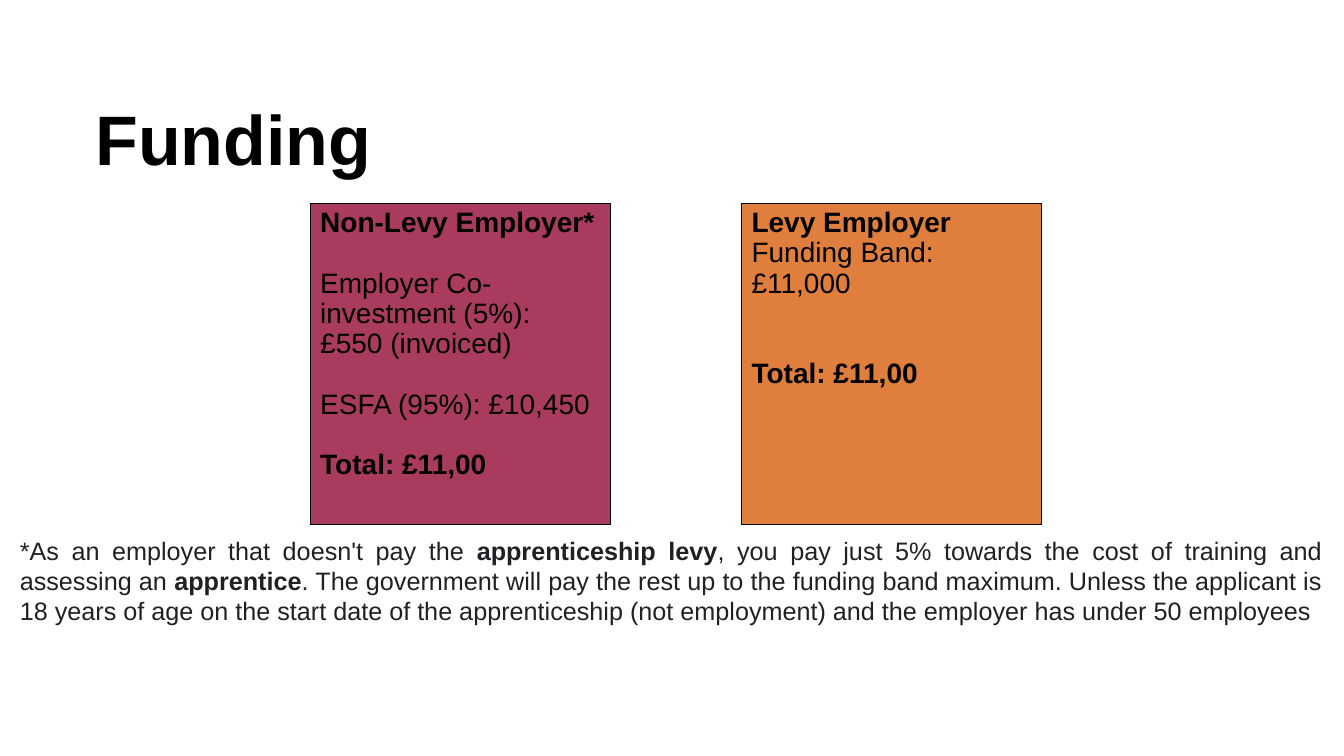
from pptx import Presentation
from pptx.dml.color import RGBColor
from pptx.enum.shapes import MSO_SHAPE as Shape
from pptx.enum.text import MSO_ANCHOR as Anchor, PP_ALIGN as Align
from pptx.util import Cm, Pt

BLACK = RGBColor(0x00, 0x00, 0x00)
CHARCOAL = RGBColor(0x20, 0x21, 0x24)
BERRY = RGBColor(0xA9, 0x3B, 0x5F)
ORANGE = RGBColor(0xE0, 0x7F, 0x3D)

# Content: each paragraph is (lines of space before, [(text, bold), ...])
TITLE = [(0, [("Funding", True)])]
CARDS = [
    (BERRY, [
        (0, [("Non-Levy Employer*", True)]),
        (1, [("Employer Co-investment (5%): £550 (invoiced)", False)]),
        (1, [("ESFA (95%): £10,450", False)]),
        (1, [("Total: £11,00", True)]),
    ]),
    (ORANGE, [
        (0, [("Levy Employer", True)]),
        (0, [("Funding Band: £11,000", False)]),
        (2, [("Total: £11,00", True)]),
    ]),
]
FOOTNOTE = [(0, [
    ("*As an employer that doesn't pay the ", False),
    ("apprenticeship levy", True),
    (", you pay just 5% towards the cost of training and assessing an ", False),
    ("apprentice", True),
    (". The government will pay the rest up to the funding band maximum. "
     "Unless the applicant is 18 years of age on the start date of the "
     "apprenticeship (not employment) and the employer has under 50 employees", False),
])]

# Formats
TITLE_FONT = {"name": "Arial", "size": Pt(50)}
CARD_FONT = {"name": "Arial", "size": Pt(20)}
NOTE_FONT = {"name": "Arial", "size": Pt(18)}
TIGHT = {"alignment": Align.LEFT, "line_spacing": 0.9}
JUSTIFIED = {"alignment": Align.JUSTIFY}
BLANK_LINE = 21.6  # points

# Layout in centimetres
CARD_LEFT, CARD_TOP, CARD_WIDTH, CARD_HEIGHT = 7.82, 5.13, 7.57, 8.08
CARD_PITCH = 10.87


def write(box, paragraphs, font, color, layout, anchor=Anchor.TOP):
    frame = box.text_frame
    frame.word_wrap = True
    frame.vertical_anchor = anchor
    for index, (gap, spans) in enumerate(paragraphs):
        para = frame.add_paragraph() if index else frame.paragraphs[0]
        for key, value in layout.items():
            setattr(para, key, value)
        if gap:
            para.space_before = Pt(gap * BLANK_LINE)
        for text, bold in spans:
            span = para.add_run()
            span.text = text
            for key, value in {**font, "bold": bold}.items():
                setattr(span.font, key, value)
            span.font.color.rgb = color


def main():
    deck = Presentation()
    deck.slide_width, deck.slide_height = Cm(33.87), Cm(19.05)
    page = deck.slides.add_slide(deck.slide_layouts[6])

    # Title
    title = page.shapes.add_textbox(Cm(2.16), Cm(2.21), Cm(29.21), Cm(2.77))
    write(title, TITLE, TITLE_FONT, BLACK, TIGHT, Anchor.MIDDLE)

    # Employer cards
    for index, (fill, paragraphs) in enumerate(CARDS):
        left = CARD_LEFT + index * CARD_PITCH
        card = page.shapes.add_shape(Shape.RECTANGLE, Cm(left), Cm(CARD_TOP),
                                     Cm(CARD_WIDTH), Cm(CARD_HEIGHT))
        card.shadow.inherit = False
        card.fill.solid()
        card.fill.fore_color.rgb = fill
        card.line.color.rgb = BLACK
        card.line.width = Pt(0.75)
        write(card, paragraphs, CARD_FONT, BLACK, TIGHT)

    # Footnote
    note = page.shapes.add_textbox(Cm(0.25), Cm(13.36), Cm(33.32), Cm(2.57))
    write(note, FOOTNOTE, NOTE_FONT, CHARCOAL, JUSTIFIED)

    deck.save("out.pptx")


if __name__ == "__main__":
    main()
